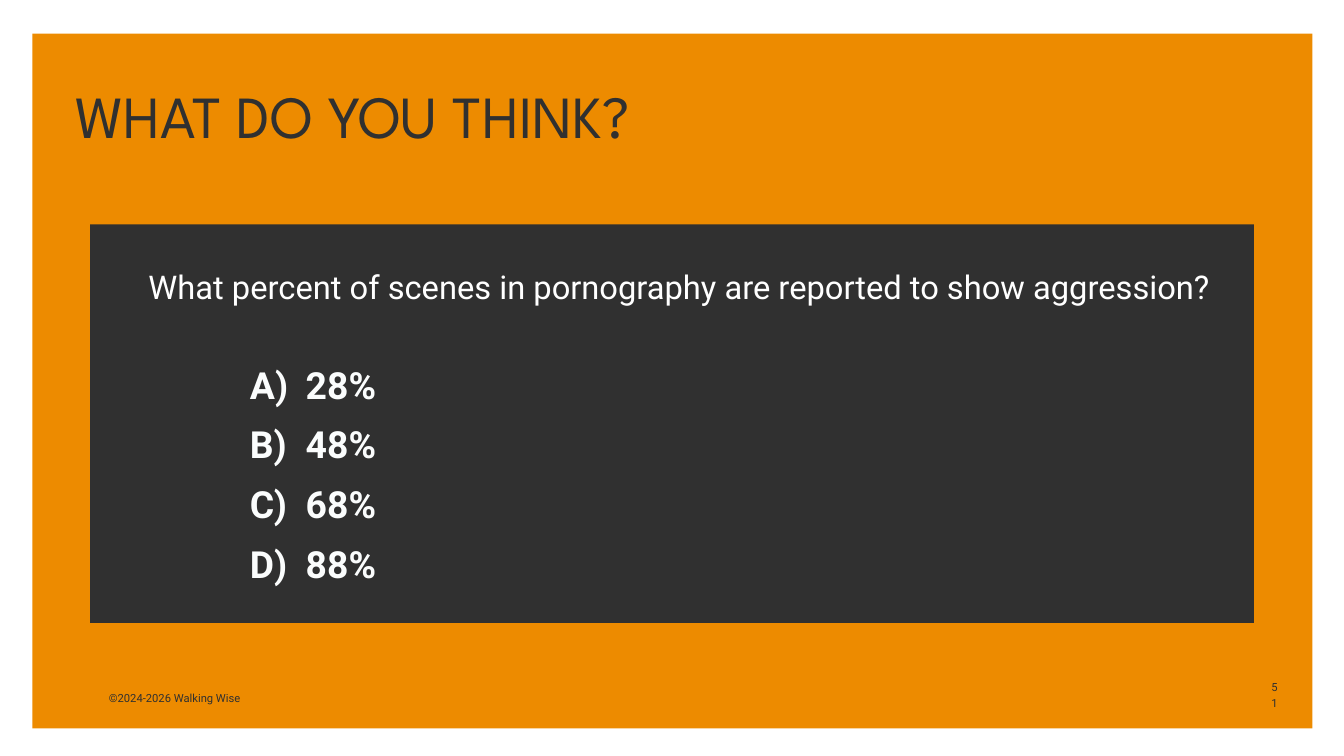
"""Build a quiz slide with one question and four lettered answers."""
from dataclasses import dataclass

from lxml.etree import SubElement
from pptx import Presentation
from pptx.dml.color import RGBColor
from pptx.enum.shapes import MSO_SHAPE
from pptx.enum.text import MSO_ANCHOR, PP_ALIGN
from pptx.oxml.ns import qn
from pptx.util import Inches, Pt


@dataclass(frozen=True)
class Theme:
    orange: RGBColor = RGBColor(0xED, 0x8B, 0x00)
    dark: RGBColor = RGBColor(0x30, 0x30, 0x30)
    white: RGBColor = RGBColor(0xFF, 0xFF, 0xFF)
    off_white: RGBColor = RGBColor(0xFB, 0xFD, 0xFD)
    heading_font: str = "League Spartan"
    body_font: str = "Roboto"
    title_size: float = 64
    answer_size: float = 40
    question_size: float = 35
    small_size: float = 12


THEME = Theme()


def add_panel(slide, left, top, width, height, color):
    sp = slide.shapes.add_shape(
        MSO_SHAPE.RECTANGLE, Inches(left), Inches(top), Inches(width), Inches(height)
    )
    sp.shadow.inherit = False
    sp.fill.solid()
    sp.fill.fore_color.rgb = color
    sp.line.fill.background()


def add_tab_stop(p, position):
    tabs = SubElement(p._p.get_or_add_pPr(), qn("a:tabLst"))
    SubElement(tabs, qn("a:tab"), pos=str(Inches(position)), algn="l")


def add_text(slide, left, top, width, height, lines, size, spacing, color,
             font=THEME.body_font, bold=False, align=PP_ALIGN.LEFT, tab=None):
    box = slide.shapes.add_textbox(
        Inches(left), Inches(top), Inches(width), Inches(height)
    )
    tf = box.text_frame
    tf.margin_left = tf.margin_top = tf.margin_right = tf.margin_bottom = 0
    tf.word_wrap = True
    tf.vertical_anchor = MSO_ANCHOR.TOP
    for i, line in enumerate(lines):
        p = tf.add_paragraph() if i else tf.paragraphs[0]
        p.text = line
        if tab:
            add_tab_stop(p, tab)
        p.alignment = align
        p.line_spacing = Pt(spacing)
        p.font.name = font
        p.font.size = Pt(size)
        p.font.bold = bold
        p.font.color.rgb = color


def main():
    prs = Presentation()
    prs.slide_width, prs.slide_height = Inches(20), Inches(11.25)
    slide = prs.slides.add_slide(prs.slide_layouts[6])

    add_panel(slide, 0.48, 0.5, 19.05, 10.34, THEME.orange)
    add_panel(slide, 1.34, 3.34, 17.32, 5.93, THEME.dark)

    add_text(slide, 1.12, 0.99, 11.29, 1.2, ["WHAT DO YOU THINK?"],
             THEME.title_size, 89.6, THEME.dark, font=THEME.heading_font)
    answers = [f"{letter})\t{percent}%"
               for letter, percent in zip("ABCD", (28, 48, 68, 88))]
    add_text(slide, 3.72, 5.16, 12.83, 3.49, answers,
             THEME.answer_size, 64, THEME.off_white, bold=True, tab=0.83)
    add_text(slide, 18.88, 10.09, 0.17, 0.2, ["51"],
             THEME.small_size, 16.8, THEME.dark, align=PP_ALIGN.CENTER)
    add_text(slide, 1.62, 10.25, 2.58, 0.23, ["©2024-2026 Walking Wise"],
             THEME.small_size, 16.8, THEME.dark)
    add_text(slide, 2.21, 3.97, 17.03, 0.6,
             ["What percent of scenes in pornography are reported to show aggression?"],
             THEME.question_size, 42, THEME.white)

    prs.save("out.pptx")


if __name__ == "__main__":
    main()
